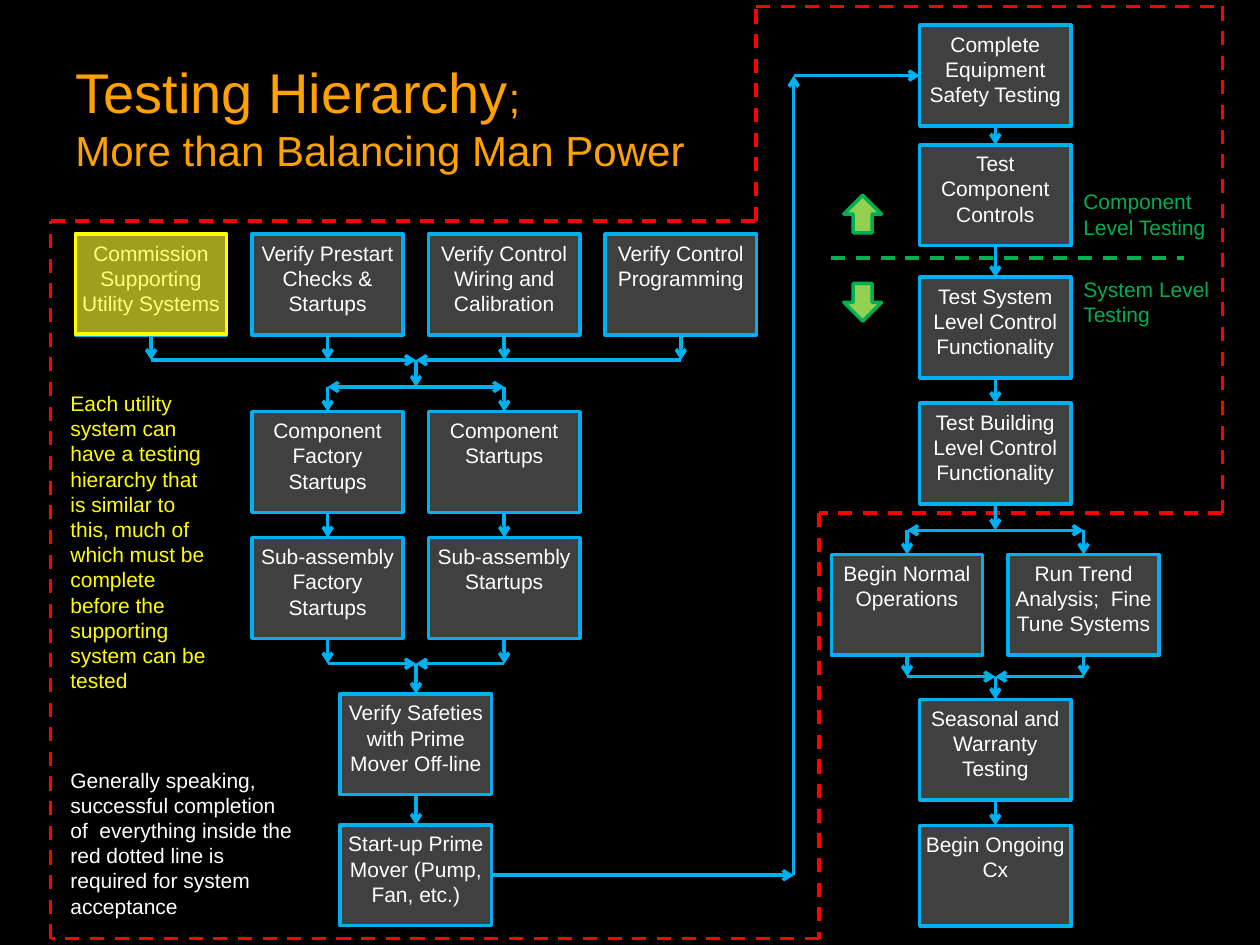
from collections import namedtuple
from dataclasses import dataclass
from itertools import pairwise

from lxml import etree
from pptx import Presentation
from pptx import util as u
from pptx.dml.color import RGBColor
from pptx.enum import dml, shapes, text
from pptx.oxml import ns

Box = namedtuple("Box", "left top width height")
Joint = namedtuple("Joint", "shape site")
TOP, LEFT, BOTTOM, RIGHT = range(4)


@dataclass(frozen=True)
class Theme:
    font: str = "Arial"
    ground: str = "000000"
    title: str = "FFA100"
    body: str = "FFFFFF"
    step: str = "404040"
    flow: str = "00B0F0"
    scope: str = "FF0000"
    utility: str = "FFFF00"
    level: str = "00B050"
    level_fill: str = "92D050"
    title_size: int = 32
    subtitle_size: int = 24
    body_size: int = 12
    stroke: int = 2
    step_width: float = 3.05
    step_height: float = 2.03
    pitch: float = 3.56


THEME = Theme()


def apply(target, values):
    for name, value in values.items():
        setattr(target, name, value)


def paint(fill, colour):
    fill.solid()
    fill.fore_color.rgb = RGBColor.from_string(colour)


def add_span(para, words, size, colour):
    span = para.add_run()
    span.text = words
    apply(span.font, {"name": THEME.font, "size": u.Pt(size)})
    span.font.color.rgb = RGBColor.from_string(colour)


def add_note(page, box, words, colour):
    note = page.shapes.add_textbox(*map(u.Cm, box))
    note.text_frame.word_wrap = True
    add_span(note.text_frame.paragraphs[0], words, THEME.body_size, colour)


def add_figure(page, kind, box, fill, line):
    figure = page.shapes.add_shape(kind, *map(u.Cm, box))
    figure.shadow.inherit = False
    paint(figure.fill, fill)
    paint(figure.line.fill, line)
    figure.line.width = u.Pt(THEME.stroke)
    return figure


def add_step(page, words, left, top):
    box = Box(left, top, THEME.step_width, THEME.step_height)
    step = add_figure(page, shapes.MSO_SHAPE.RECTANGLE, box, THEME.step, THEME.flow)
    frame = step.text_frame
    margins = ("margin_left", "margin_top", "margin_right", "margin_bottom")
    apply(frame, dict.fromkeys(margins, u.Cm(0.12)))
    apply(frame, {"word_wrap": True, "vertical_anchor": text.MSO_ANCHOR.TOP})
    para = frame.paragraphs[0]
    para.alignment = text.PP_ALIGN.CENTER
    add_span(para, words, THEME.body_size, THEME.body)
    return step


def add_line(page, start, end, colour=THEME.flow, arrow=True, dash=False):
    ends = [(0, 0) if isinstance(end_, Joint) else end_ for end_ in (start, end)]
    line = page.shapes.add_connector(
        shapes.MSO_CONNECTOR.STRAIGHT, *(u.Cm(value) for point in ends for value in point)
    )
    if isinstance(start, Joint):
        line.begin_connect(*start)
    if isinstance(end, Joint):
        line.end_connect(*end)
    paint(line.line.fill, colour)
    line.line.width = u.Pt(THEME.stroke)
    if dash:
        line.line.dash_style = dml.MSO_LINE.DASH
    if arrow:
        etree.SubElement(line.line._get_or_add_ln(), ns.qn("a:tailEnd"), type="arrow")
    etree.SubElement(line._element.spPr, ns.qn("a:effectLst"))


def middle(shape):
    return shape.left.cm + shape.width.cm / 2, shape.top.cm + shape.height.cm / 2


def add_chain(page, steps):
    for upper, lower in pairwise(steps):
        add_line(page, Joint(upper, BOTTOM), Joint(lower, TOP))


def gather(page, steps, hub, rail):
    centres = [middle(step)[0] for step in steps]
    for step, centre in zip(steps, centres):
        add_line(page, Joint(step, BOTTOM), (centre, rail))
    before = [centre for centre in centres if centre < hub]
    after = [centre for centre in reversed(centres) if centre > hub]
    for side in (before, after):
        for start, end in pairwise(side + [hub]):
            add_line(page, (start, rail), (end, rail), arrow=end == hub)


def scatter(page, hub, rail, steps):
    for step in steps:
        centre = middle(step)[0]
        add_line(page, (hub, rail), (centre, rail))
        add_line(page, (centre, rail), Joint(step, TOP))


def add_scope(page, box):
    left, top, right, bottom = box.left, box.top, box.left + box.width, box.top + box.height
    corners = [
        (left, top + 4.32), (left + 14.22, top + 4.32), (left + 14.22, top),
        (right, top), (right, top + 10.21), (left + 15.49, top + 10.21),
        (left + 15.49, bottom), (left, bottom),
    ]
    for start, end in pairwise(corners + corners[:1]):
        add_line(page, start, end, THEME.scope, arrow=False, dash=True)
    words = ("Generally speaking, successful completion of  everything inside "
             "the red dotted line is required for system acceptance")
    add_note(page, Box(left + 0.15, bottom - 3.58, 4.98, 3.33), words, THEME.body)


def add_title(page, box):
    title = page.shapes.add_textbox(*map(u.Cm, box))
    apply(title.text_frame, {"word_wrap": True, "vertical_anchor": text.MSO_ANCHOR.MIDDLE})
    para = title.text_frame.paragraphs[0]
    add_span(para, "Testing Hierarchy", THEME.title_size, THEME.title)
    add_span(para, ";", THEME.subtitle_size, THEME.title)
    para.add_line_break()
    add_span(para, "More than Balancing Man Power", THEME.subtitle_size, THEME.title)


def add_startup_flow(page, box):
    columns = [box.left + index * THEME.pitch for index in range(4)]

    def add_row(labels, lefts, offset):
        return [add_step(page, words, left, box.top + offset)
                for words, left in zip(labels, lefts)]

    checks = add_row(
        ["Commission Supporting Utility Systems", "Verify Prestart Checks & Startups",
         "Verify Control Wiring and Calibration", "Verify Control Programming"], columns, 0)
    startups = add_row(["Component Factory Startups", "Component Startups"], columns[1:3], 3.58)
    assemblies = add_row(["Sub-assembly Factory Startups", "Sub-assembly Startups"],
                         columns[1:3], 6.12)
    centre = columns[1] + THEME.pitch / 2
    safeties, = add_row(["Verify Safeties with Prime Mover Off-line"], [centre], 9.27)
    mover, = add_row(["Start-up Prime Mover (Pump, Fan, etc.)"], [centre], 11.91)

    hub = middle(mover)[0]
    upper, lower, last = (box.top + offset for offset in (2.54, 3.08, 8.66))
    gather(page, checks, hub, upper)
    add_line(page, (hub, upper), (hub, lower))
    scatter(page, hub, lower, startups)
    for pair in zip(startups, assemblies):
        add_chain(page, pair)
    gather(page, assemblies, hub, last)
    add_line(page, (hub, last), Joint(safeties, TOP))
    add_chain(page, [safeties, mover])
    return mover


def add_system_flow(page, box):
    left = box.left + THEME.pitch / 2
    labels = {
        0: "Complete Equipment Safety Testing", 2.41: "Test Component Controls",
        5.08: "Test System Level Control Functionality",
        7.62: "Test Building Level Control Functionality",
    }
    tests = [add_step(page, words, left, box.top + offset) for offset, words in labels.items()]
    branches = [add_step(page, words, box.left + index * THEME.pitch, box.top + 10.67)
                for index, words in enumerate(
                    ["Begin Normal Operations", "Run Trend Analysis;  Fine Tune Systems"])]
    closing = [add_step(page, words, left, box.top + offset) for offset, words in
               {13.59: "Seasonal and Warranty Testing", 16.13: "Begin Ongoing Cx"}.items()]

    hub = middle(tests[0])[0]
    split, merge = box.top + 10.18, box.top + 13.13
    add_chain(page, tests)
    add_line(page, Joint(tests[-1], BOTTOM), (hub, split))
    scatter(page, hub, split, branches)
    gather(page, branches, hub, merge)
    add_line(page, (hub, merge), Joint(closing[0], TOP))
    add_chain(page, closing)
    return tests[0]


def add_feed(page, start, end, riser):
    low, high = (riser, middle(start)[1]), (riser, middle(end)[1])
    add_line(page, Joint(start, RIGHT), low)
    add_line(page, low, high)
    add_line(page, high, Joint(end, LEFT))


def add_levels(page, box):
    border = box.top + box.height / 2
    add_line(page, (box.left, border), (box.left + box.width, border),
             THEME.level, arrow=False, dash=True)
    levels = [("Component Level Testing", -1.27, -1.52, 270),
              ("System Level Testing", 0.51, 0.25, 90)]
    for words, arrow_offset, note_offset, turn in levels:
        arrow = add_figure(page, shapes.MSO_SHAPE.RIGHT_ARROW,
                           Box(box.left + 0.25, border + arrow_offset, 0.76, 0.76),
                           THEME.level_fill, THEME.level)
        arrow.rotation = turn
        add_note(page, Box(box.left + 4.83, border + note_offset, 3.3, 1.27), words, THEME.level)


def add_utility(page, box):
    words = ("Each utility system can have a testing hierarchy that is similar to this, "
             "much of which must be complete before the supporting system can be tested")
    add_note(page, Box(box.left - 0.35, box.top + 3.03, 3.4, 6.4), words, THEME.utility)
    cover = add_figure(page, shapes.MSO_SHAPE.RECTANGLE, box, THEME.utility, THEME.utility)
    colour = cover.fill._xPr.find(ns.qn("a:solidFill"))[0]
    etree.SubElement(colour, ns.qn("a:alpha"), val="50000")


def main():
    deck = Presentation()
    apply(deck, {"slide_width": u.Cm(25.4), "slide_height": u.Cm(19.05)})
    page = deck.slides.add_slide(deck.slide_layouts[6])
    paint(page.background.fill, THEME.ground)
    add_scope(page, Box(1.02, 0.13, 23.62, 18.79))
    add_title(page, Box(1.27, 0.76, 13.46, 3.18))
    mover = add_startup_flow(page, Box(1.52, 4.72, 13.73, 13.94))
    safety = add_system_flow(page, Box(16.76, 0.51, 6.61, 18.16))
    add_feed(page, mover, safety, 16)
    add_levels(page, Box(16.76, 3.68, 7.11, 3.05))
    add_utility(page, Box(1.52, 4.72, THEME.step_width, 2.01))
    deck.save("out.pptx")


if __name__ == "__main__":
    main()
